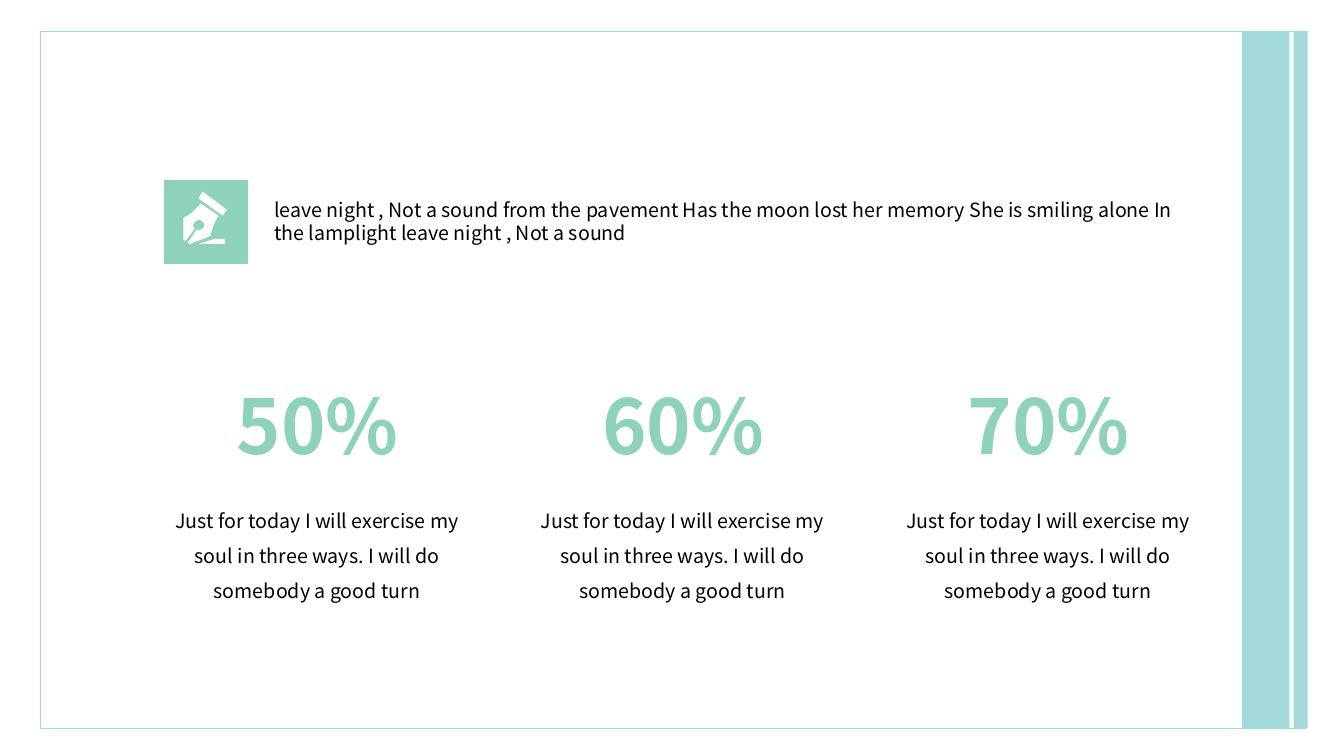
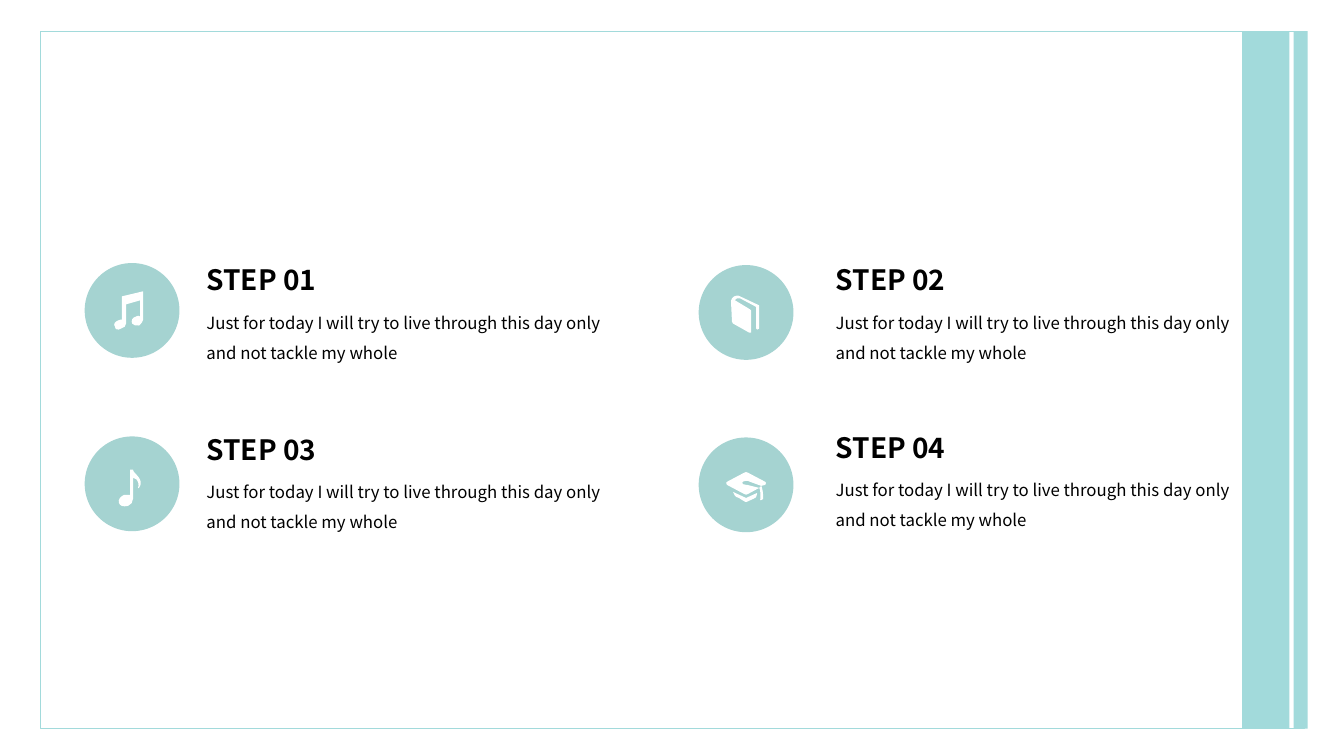
from lxml import etree
from pptx import Presentation
from pptx.dml.color import RGBColor
from pptx.enum.shapes import MSO_SHAPE
from pptx.enum.text import MSO_AUTO_SIZE, PP_ALIGN
from pptx.oxml.ns import qn
from pptx.util import Inches, Pt

RECTANGLE, OVAL = MSO_SHAPE.RECTANGLE, MSO_SHAPE.OVAL
FIT_TEXT = MSO_AUTO_SIZE.SHAPE_TO_FIT_TEXT
LEFT, CENTER = PP_ALIGN.LEFT, PP_ALIGN.CENTER

AQUA = RGBColor(0xA2, 0xDA, 0xDB)
MINT = RGBColor(0x8E, 0xD2, 0xBA)
SEA = RGBColor(0xA5, 0xD3, 0xD1)
BLACK = RGBColor(0, 0, 0)
WHITE = RGBColor(255, 255, 255)
FONT = "Noto Sans CJK SC"

# Text styles: font values, colour, paragraph values
INTRO = ({"size": Pt(14)}, BLACK, {"alignment": LEFT, "space_before": Pt(10)})
FIGURE = ({"size": Pt(54), "bold": True}, MINT, {"alignment": CENTER})
CAPTION = ({"size": Pt(14)}, BLACK, {"alignment": CENTER, "line_spacing": 1.5})
STEP_TITLE = ({"size": Pt(20), "bold": True}, BLACK, {"alignment": LEFT})
STEP_BODY = ({"size": Pt(12)}, BLACK, {"alignment": LEFT, "line_spacing": 1.5})

# Icon outlines in hundredths of an inch: a pair is a corner,
# six numbers are a Bezier curve (two handles and the end)
PEN = [
    [(2, 49), (0, 48), (0, 26), (7, 23, 12, 18, 17, 12), (35, 24),
     (30, 31, 28, 38, 27, 44), (21, 47, 13, 49, 7, 52), (4, 51), (13, 38),
     (15, 39, 18, 38, 20, 36), (22, 34, 21, 31, 18, 29),
     (16, 27, 13, 28, 11, 30), (9, 32, 9, 35, 11, 37)],
    [(15, 52), (41, 52), (41, 47), (31, 47)],
    [(39, 24), (43, 18), (19, 0), (15, 7)],
]
TWO_NOTES = [
    [(9, 5), (9, 28), (8, 28, 7, 28, 5, 29), (2, 30, 0, 33, 2, 35),
     (2, 38, 5, 39, 8, 37), (11, 37, 13, 34, 13, 32), (13, 13), (27, 9),
     (27, 25), (26, 24, 24, 24, 23, 25), (19, 26, 18, 29, 19, 32),
     (20, 34, 23, 34, 26, 34), (28, 32, 30, 30, 30, 28), (30, 0)],
]
NOTE = [
    [(15, 0), (12, 0), (12, 25), (10, 25, 8, 25, 6, 25),
     (2, 27, 0, 30, 1, 33), (2, 36, 5, 37, 10, 36), (13, 35, 15, 32, 15, 29),
     (15, 8), (21, 9, 21, 16, 20, 18), (20, 18, 21, 19, 21, 18),
     (27, 9, 15, 4, 15, 0)],
]
BOOK = [
    [(28, 11), (9, 2), (7, 0, 2, 2, 1, 4), (0, 6, 0, 7, 0, 7), (1, 27),
     (2, 29), (18, 38), (20, 38), (20, 16), (19, 15), (4, 6),
     (4, 6, 4, 5, 6, 4), (9, 4), (24, 12), (25, 13), (25, 34), (26, 35),
     (28, 34)],
]
CAP = [
    [(7, 20), (8, 23, 9, 25, 13, 26), (16, 28, 19, 30, 20, 30),
     (21, 30, 24, 28, 27, 27), (31, 25, 30, 25, 31, 21), (20, 26)],
    [(39, 10), (22, 1), (21, 0, 19, 0, 18, 1), (1, 10),
     (0, 11, 0, 11, 1, 13), (18, 22), (19, 23, 21, 23, 22, 22), (33, 16),
     (21, 13), (20, 13), (18, 13, 16, 12, 16, 11), (16, 10, 18, 9, 20, 9),
     (21, 9, 23, 9, 24, 10), (35, 14), (39, 13), (40, 11, 40, 11, 39, 10)],
    [(34, 28), (33, 28, 36, 29, 37, 27), (37, 17, 35, 14, 35, 14), (33, 16),
     (33, 16, 35, 18, 34, 28)],
]


def add_text(page, left, top, width, height, text, style):
    font_values, color, para_values = style
    box = page.shapes.add_textbox(Inches(left), Inches(top),
                                  Inches(width), Inches(height))
    box.text_frame.word_wrap = True
    box.text_frame.auto_size = FIT_TEXT
    para = box.text_frame.paragraphs[0]
    for name, value in para_values.items():
        setattr(para, name, value)
    span = para.add_run()
    span.text = text
    span.font.name = FONT
    span.font.color.rgb = color
    for name, value in font_values.items():
        setattr(span.font, name, value)


def add_icon(page, left, top, outlines):
    builder = None
    for outline in outlines:
        ends = [(Inches(left + piece[-2] / 100), Inches(top + piece[-1] / 100))
                for piece in outline]
        if builder is None:
            builder = page.shapes.build_freeform(*ends[0])
        else:
            builder.move_to(*ends[0])
        builder.add_line_segments(ends[1:], close=True)
    icon = builder.convert_to_shape()
    icon.shadow.inherit = False
    icon.fill.solid()
    icon.fill.fore_color.rgb = WHITE
    icon.line.fill.background()

    # Bend the segments that have handles
    pieces = [piece for outline in outlines for piece in outline[1:]]
    segments = list(icon.element.iter(qn("a:lnTo")))
    for segment, piece in zip(segments, pieces):
        if len(piece) == 2:
            continue
        curve = etree.Element(qn("a:cubicBezTo"))
        for x, y in (piece[0:2], piece[2:4], piece[4:6]):
            point = etree.SubElement(curve, qn("a:pt"))
            point.set("x", str(Inches(left + x / 100) - icon.left))
            point.set("y", str(Inches(top + y / 100) - icon.top))
        segment.getparent().replace(segment, curve)


deck = Presentation()
deck.slide_width, deck.slide_height = Inches(13.33), Inches(7.5)
blank = deck.slide_layouts[6]
figures_page, steps_page = [deck.slides.add_slide(blank) for _ in range(2)]

# Shared bands and frame
for page in (figures_page, steps_page):
    for left, width, filled in ((12.83, 0.14, True), (12.32, 0.47, True),
                                (0.4, 12.54, False)):
        band = page.shapes.add_shape(RECTANGLE, Inches(left), Inches(0.31),
                                     Inches(width), Inches(6.92))
        band.shadow.inherit = False
        if filled:
            band.fill.solid()
            band.fill.fore_color.rgb = AQUA
            band.line.fill.background()
        else:
            band.fill.background()
            band.line.color.rgb = AQUA
            band.line.width = Pt(1)

# Slide 1: introduction with pen icon
tile = figures_page.shapes.add_shape(RECTANGLE, Inches(1.63), Inches(1.79),
                                     Inches(0.82), Inches(0.82))
tile.shadow.inherit = False
tile.fill.solid()
tile.fill.fore_color.rgb = MINT
tile.line.color.rgb = MINT
tile.line.width = Pt(0.75)
add_icon(figures_page, 1.82, 1.9, PEN)
add_text(figures_page, 2.62, 1.91, 9.43, 0.57,
         "leave night , Not a sound from the pavement Has the moon lost her "
         "memory She is smiling alone In the lamplight leave night , "
         "Not a sound", INTRO)

# Slide 1: three figures in equal columns
column_step = (8.75 - 1.5) / 2
for column, figure in enumerate(("50%", "60%", "70%")):
    left = 1.5 + column * column_step
    add_text(figures_page, left, 3.71, 3.3, 1.01, figure, FIGURE)
    add_text(figures_page, left + 0.12, 4.88, 3.05, 1.51,
             "Just for today I will exercise my soul in three ways. "
             "I will do somebody a good turn", CAPTION)

# Slide 2: four steps (circle, icon, text positions)
steps = [
    ("STEP 01", (0.84, 2.61), TWO_NOTES, (1.12, 2.89), (1.95, 2.56)),
    ("STEP 02", (6.93, 2.63), BOOK, (7.25, 2.92), (8.19, 2.56)),
    ("STEP 03", (0.84, 4.33), NOTE, (1.17, 4.66), (1.95, 4.24)),
    ("STEP 04", (6.93, 4.34), CAP, (7.2, 4.68), (8.19, 4.22)),
]
for title, circle_at, outlines, icon_at, (left, top) in steps:
    circle = steps_page.shapes.add_shape(OVAL, *map(Inches, circle_at),
                                         Inches(0.94), Inches(0.94))
    circle.shadow.inherit = False
    circle.fill.solid()
    circle.fill.fore_color.rgb = SEA
    circle.line.fill.background()
    add_icon(steps_page, *icon_at, outlines)
    add_text(steps_page, left, top, 3.07, 0.44, title, STEP_TITLE)
    add_text(steps_page, left, top + 0.39, 4.43, 0.71,
             "Just for today I will try to live through this day only "
             "and not tackle my whole", STEP_BODY)

deck.save("out.pptx")
